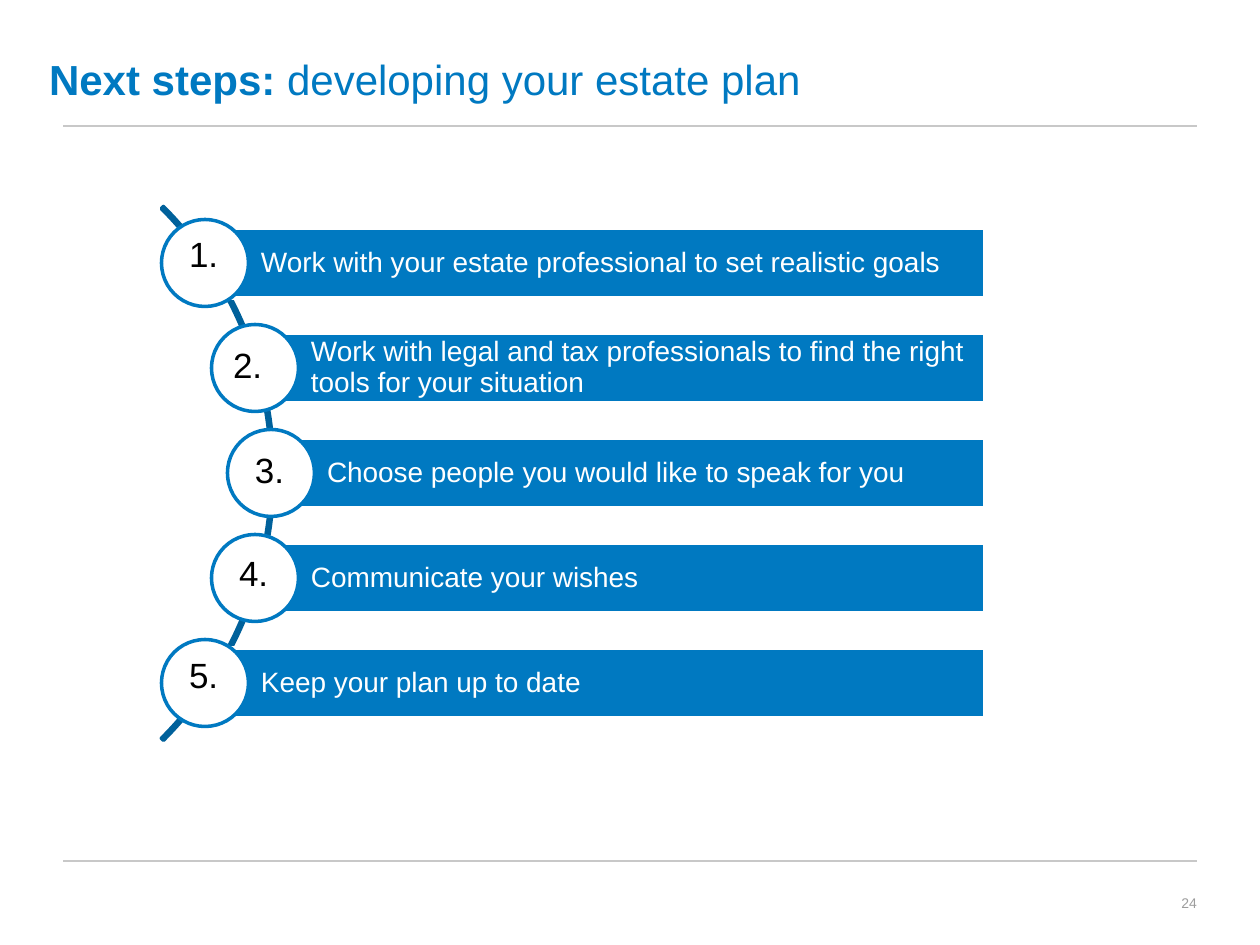
"""Build the estate planning next-steps slide."""
import pptx
import pptx.dml.color
import pptx.enum.shapes
import pptx.enum.text
import pptx.util
from lxml import etree

TITLE = [("Next steps: ", True), ("developing your estate plan", False)]
STEPS = [
    ("Work with your estate professional to set realistic goals", 205, (189, 233)),
    ("Work with legal and tax professionals to find the right tools for your situation", 255, (233, 344)),
    ("Choose people you would like to speak for you", 271, (255, 449)),
    ("Communicate your wishes", 255, (239, 552)),
    ("Keep your plan up to date", 205, (189, 654)),
]
PAGE_NUMBER = "24"
COLORS = {"blue": "0079C1", "navy": "00619B", "white": "FFFFFF",
          "black": "000000", "rule": "C8C8C8", "gray": "9D9D9D"}
FONT = "Arial"

SLIDE_WIDTH, SLIDE_HEIGHT = 1260, 945
RULE_LEFT, RULE_RIGHT, RULE_TOPS = 63, 1197, (126, 861)
FIRST_CENTER, STEP_PITCH = 263, 105
BAR_RIGHT, BAR_HEIGHT, CIRCLE = 985, 70, 87
ARC_LEFT, ARC_TOP, ARC_SIZE = -481, 96, 755

SHAPES = pptx.enum.shapes.MSO_SHAPE
ANCHOR = pptx.enum.text.MSO_ANCHOR
ALIGN = pptx.enum.text.PP_ALIGN


def px(length):
    return round(length * 914400 / 126)


def box(*lengths):
    return [px(length) for length in lengths]


def color(name):
    return pptx.dml.color.RGBColor.from_string(COLORS[name])


def set_frame(frame, insets=(0, 0, 0, 0), anchor=ANCHOR.TOP):
    frame.word_wrap = True
    frame.auto_size = pptx.enum.text.MSO_AUTO_SIZE.NONE
    frame.vertical_anchor = anchor
    (frame.margin_left, frame.margin_top,
     frame.margin_right, frame.margin_bottom) = box(*insets)


def write(frame, runs, size, ink, align=ALIGN.LEFT):
    paragraph = frame.paragraphs[0]
    paragraph.alignment = align
    for words, bold in runs:
        run = paragraph.add_run()
        run.text = words
        run.font.name = FONT
        run.font.size = pptx.util.Pt(size)
        run.font.bold = bold
        run.font.color.rgb = color(ink)
    return paragraph


def add_figure(slide, kind, place, fill, line):
    figure = slide.shapes.add_shape(kind, *box(*place))
    figure.shadow.inherit = False
    if fill:
        figure.fill.solid()
        figure.fill.fore_color.rgb = color(fill)
    else:
        figure.fill.background()
    figure.line.color.rgb = color(line)
    figure.line.width = pptx.util.Pt(2)
    return figure


def add_label(slide, place, words, size, ink, align=ALIGN.LEFT, anchor=ANCHOR.TOP):
    label = slide.shapes.add_textbox(*box(*place))
    set_frame(label.text_frame, anchor=anchor)
    write(label.text_frame, [(words, False)], size, ink, align)


def add_rule(slide, top):
    rule = slide.shapes.add_connector(
        pptx.enum.shapes.MSO_CONNECTOR.STRAIGHT, *box(RULE_LEFT, top, RULE_RIGHT, top))
    rule.line.color.rgb = color("rule")
    rule.line.width = pptx.util.Pt(0.75)
    properties = rule._element.spPr
    etree.SubElement(properties, pptx.oxml.ns.qn("a:effectLst"))


def add_step(slide, center_y, center_x, words):
    bar = add_figure(slide, SHAPES.RECTANGLE,
                     (center_x, center_y - BAR_HEIGHT / 2, BAR_RIGHT - center_x, BAR_HEIGHT),
                     "blue", "white")
    set_frame(bar.text_frame, (56, 5, 5, 5), ANCHOR.MIDDLE)
    write(bar.text_frame, [(words, False)], 16, "white").line_spacing = 0.9
    add_figure(slide, SHAPES.OVAL,
               (center_x - CIRCLE / 2, center_y - CIRCLE / 2, CIRCLE, CIRCLE),
               "white", "blue")


def main():
    deck = pptx.Presentation()
    deck.slide_width, deck.slide_height = box(SLIDE_WIDTH, SLIDE_HEIGHT)
    slide = deck.slides.add_slide(deck.slide_layouts[5])

    for top in RULE_TOPS:
        add_rule(slide, top)

    title = slide.shapes.title
    title.left, title.top, title.width, title.height = box(49, 32, 1134, 94)
    set_frame(title.text_frame, anchor=ANCHOR.MIDDLE)
    write(title.text_frame, TITLE, 24, "blue")

    arc = add_figure(slide, SHAPES.BLOCK_ARC,
                     (ARC_LEFT, ARC_TOP, ARC_SIZE, ARC_SIZE), None, "navy")
    for index, value in enumerate((189, 27, 0.004)):
        arc.adjustments[index] = value

    for index, (words, center_x, _) in enumerate(STEPS):
        add_step(slide, FIRST_CENTER + index * STEP_PITCH, center_x, words)
    for number, (_, _, (left, top)) in enumerate(STEPS, 1):
        add_label(slide, (left, top, 44, 53), f"{number}.", 20, "black")

    add_label(slide, (1134, 861, 63, 84), PAGE_NUMBER, 8, "gray",
              ALIGN.RIGHT, ANCHOR.MIDDLE)
    deck.save("out.pptx")


if __name__ == "__main__":
    main()
